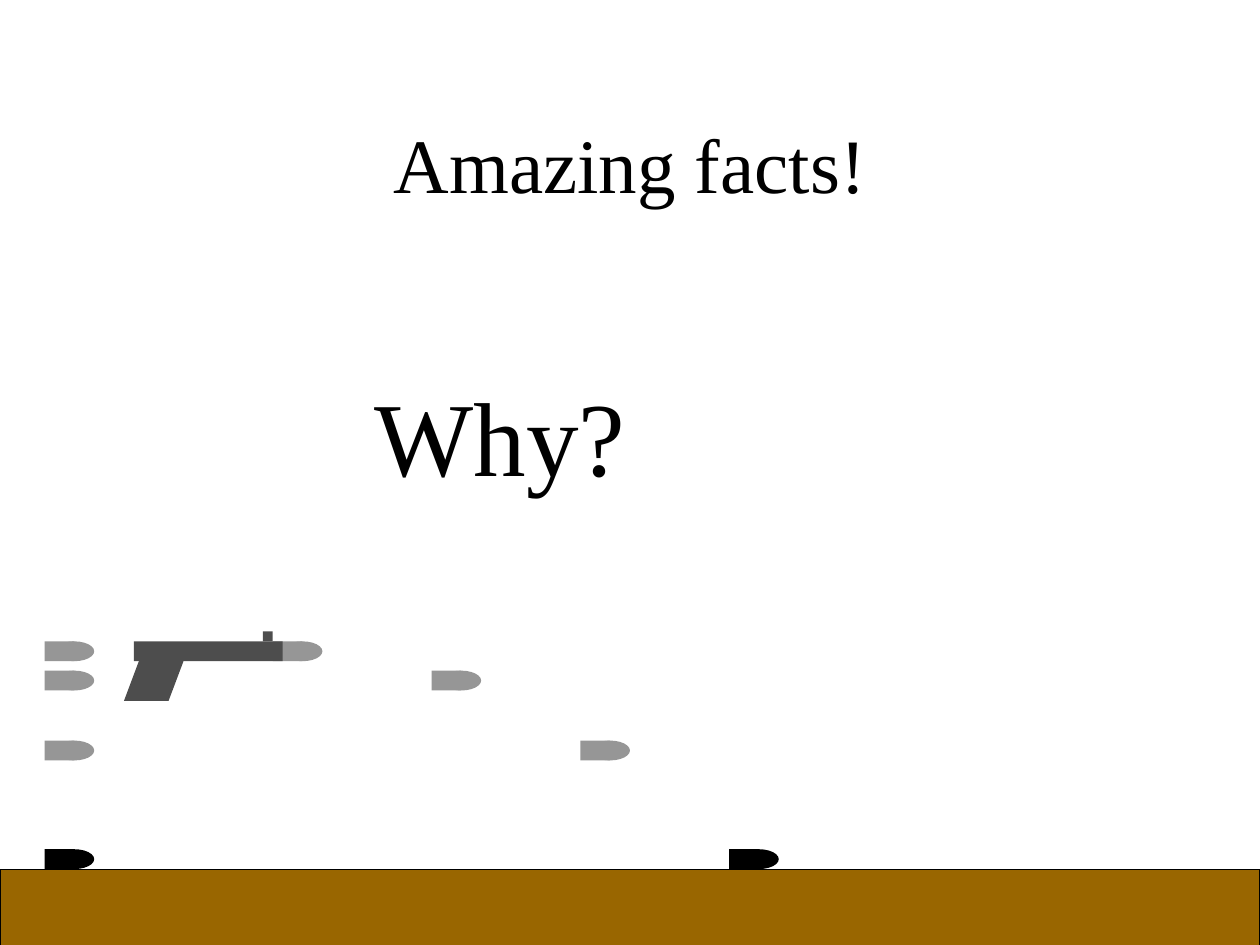
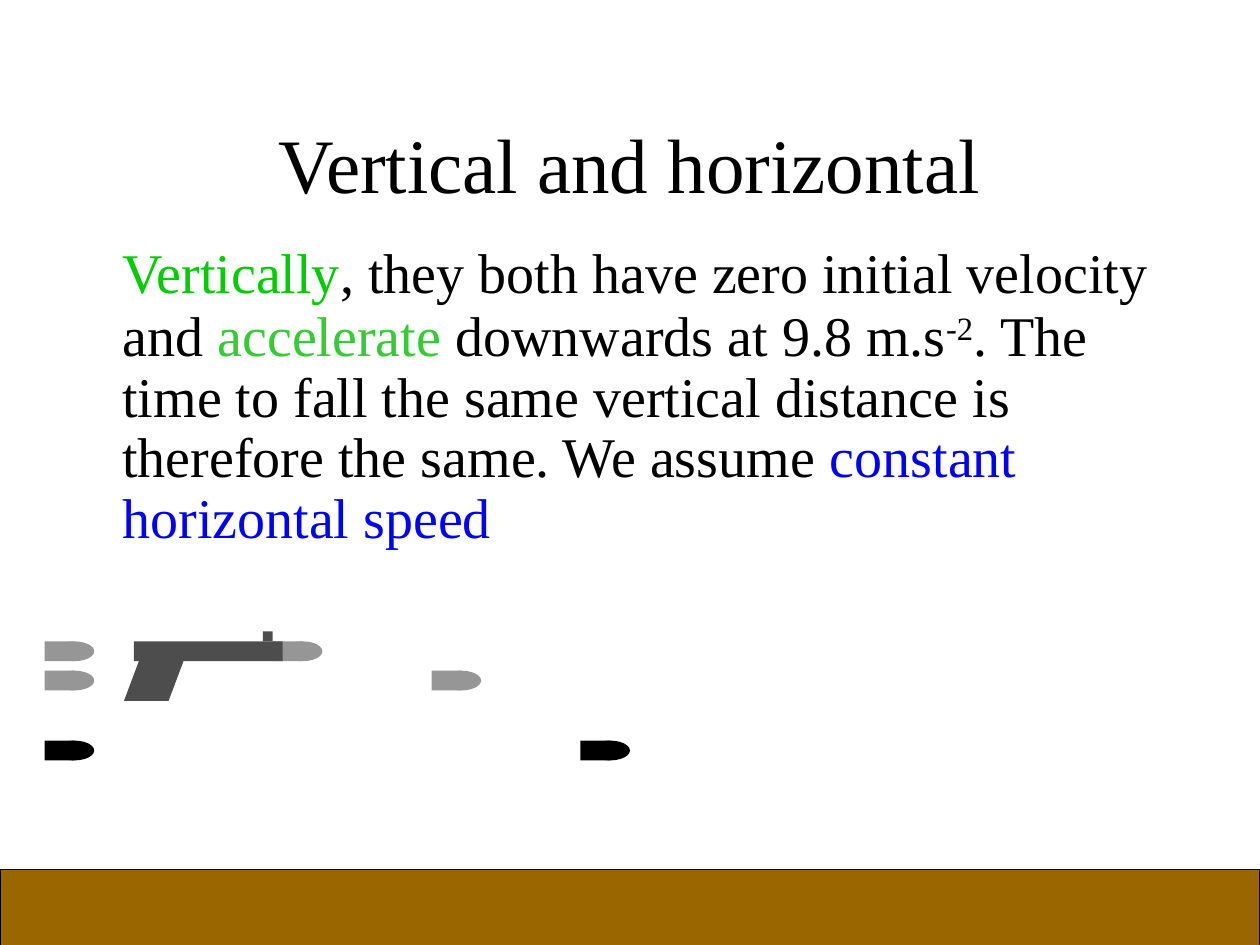
import pptx
import pptx.dml.color
import pptx.enum.shapes
import pptx.enum.text
import pptx.util

Cm = pptx.util.Cm
Pt = pptx.util.Pt
Kind = pptx.enum.shapes.MSO_SHAPE
Align = pptx.enum.text.PP_ALIGN
Anchor = pptx.enum.text.MSO_ANCHOR

HUES = {
    "ink": "000000",
    "grey": "969696",
    "steel": "4D4D4D",
    "soil": "996600",
    "green": "00CC00",
    "lime": "33CC33",
    "blue": "0000FF",
}
TOPS = [12.93, 13.52, 14.93, 17.12]
SPOTS = [5.5, 8.7, 11.7, 14.7]
START = 0.9


def apply(thing, form):
    for name, value in form.items():
        setattr(thing, name, value)


class Deck:
    font = "Times New Roman"

    def __init__(self):
        self.show = pptx.Presentation()
        apply(self.show, {"slide_width": Cm(25.4), "slide_height": Cm(19.05)})
        self.slide = None

    def page(self):
        self.slide = self.show.slides.add_slide(self.show.slide_layouts[6])

    def hue(self, name):
        return pptx.dml.color.RGBColor.from_string(HUES[name])

    def shape(self, kind, box, hue, home=None, edge=None):
        home = home or self.slide.shapes
        part = home.add_shape(kind, *(Cm(side) for side in box))
        part.shadow.inherit = False
        part.fill.solid()
        part.fill.fore_color.rgb = self.hue(hue)
        if edge:
            part.line.color.rgb = self.hue(edge)
            part.line.width = Pt(0.75)
        else:
            part.line.fill.background()
        return part

    def text(self, box, runs, size, frame=None, para=None):
        area = self.slide.shapes.add_textbox(*(Cm(side) for side in box)).text_frame
        apply(area, {"word_wrap": True, **(frame or {})})
        line = area.paragraphs[0]
        apply(line, para or {})
        for words, hue, form in runs:
            run = line.add_run()
            run.text = words
            apply(run.font, {"name": self.font, "size": Pt(size), **form})
            run.font.color.rgb = self.hue(hue)
        return line

    def title(self, words):
        self.text((1.9, 1.7, 21.6, 3.18), [(words, "ink", {})], 44,
                  {"vertical_anchor": Anchor.MIDDLE}, {"alignment": Align.CENTER})

    def bullet(self, left, top, hue):
        home = self.slide.shapes.add_group_shape().shapes
        self.shape(Kind.RECTANGLE, (left, top, 0.6, 0.4), hue, home)
        self.shape(Kind.OVAL, (left + 0.2, top, 0.8, 0.4), hue, home)

    def gun(self):
        top = TOPS[0]
        home = self.slide.shapes.add_group_shape().shapes
        grip = self.shape(Kind.PARALLELOGRAM, (2.5, top + 0.4, 1.2, 0.8), "steel", home)
        grip.adjustments[0] = 0.376
        self.shape(Kind.RECTANGLE, (2.7, top, 3, 0.4), "steel", home)
        self.shape(Kind.RECTANGLE, (5.3, top - 0.2, 0.2, 0.2), "steel", home)

    def scene(self, count):
        self.bullet(SPOTS[0], TOPS[0], "grey")
        self.shape(Kind.RECTANGLE, (0, 17.53, 25.4, 2), "soil", edge="ink")
        self.gun()
        self.bullet(START, TOPS[0], "grey")
        for step in range(1, count):
            hue = "ink" if step == count - 1 else "grey"
            for left in (SPOTS[step], START):
                self.bullet(left, TOPS[step], hue)


def main():
    deck = Deck()

    deck.page()
    deck.title("Amazing facts!")
    deck.scene(4)
    deck.text((7.3, 7.37, 11, 2.6), [("Why?", "ink", {})], 60)

    deck.page()
    deck.title("Vertical and horizontal")
    line = deck.text((1.27, 4.57, 22.86, 6.35), [
        ("\t", "ink", {"size": Pt(40)}),
        ("Vertically", "green", {}),
        (", they both have zero initial velocity and ", "ink", {}),
        ("accelerate ", "lime", {}),
        ("downwards at 9.8 m.s", "ink", {}),
        ("-2", "ink", {}),
        (". The time to fall the same vertical distance is therefore the same. "
         "We assume ", "ink", {}),
        ("constant horizontal speed", "blue", {}),
    ], 32, para={"line_spacing": 0.9})
    props = line._p.get_or_add_pPr()
    for name, value in {"marL": Cm(0.95), "indent": Cm(-0.95)}.items():
        props.set(name, str(value))
    line.runs[5]._r.get_or_add_rPr().set("baseline", "30000")
    deck.scene(3)

    deck.show.save("out.pptx")


if __name__ == "__main__":
    main()
